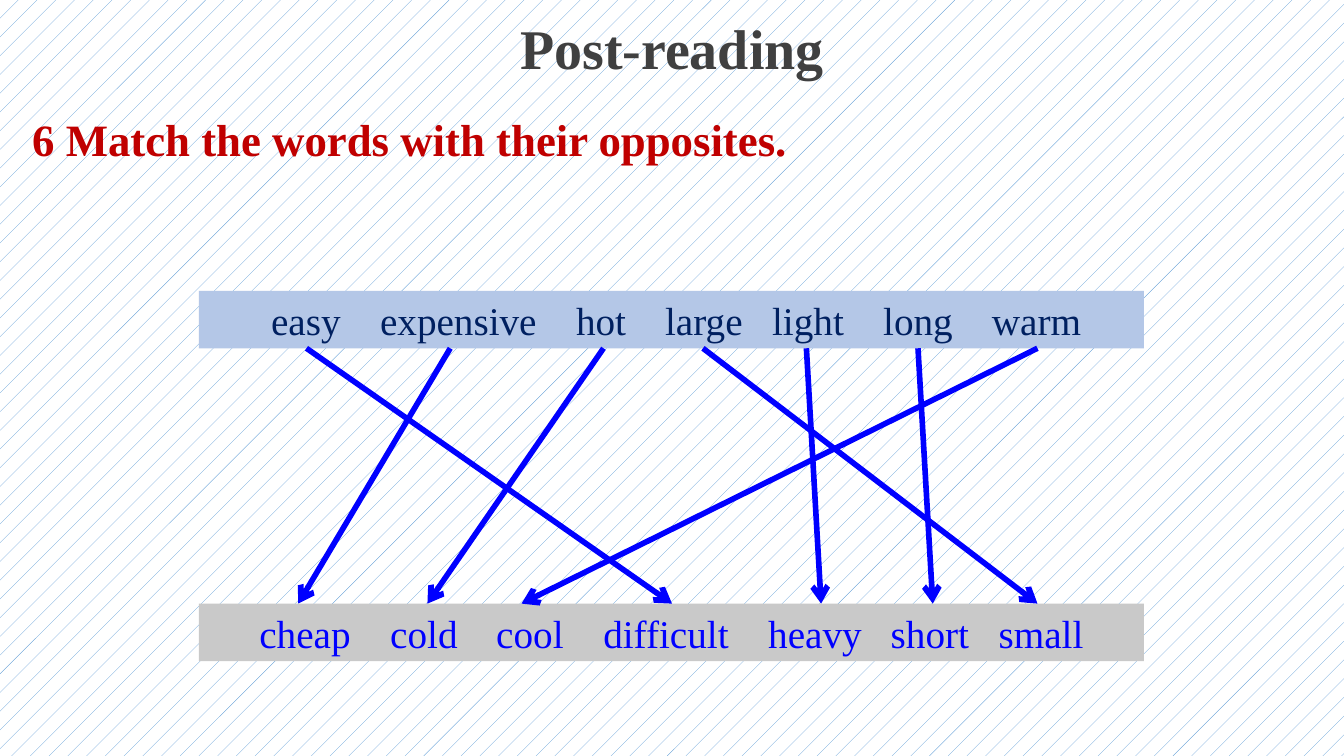
import pptx
import pptx.util
import pptx.dml.color
import pptx.enum.dml
import pptx.enum.shapes
import pptx.enum.text
import pptx.oxml
import pptx.oxml.ns

Pt = pptx.util.Pt
ALIGN = pptx.enum.text.PP_ALIGN
FONT = "Times New Roman"
BAR_LEFT, BAR_WIDTH, BAR_HEIGHT = 106.6, 506.2, 30.8
WORDS_TOP, OPPOSITES_TOP = 155.8, 323.4
INSET_X, INSET_Y = 5.04, 2.88

WORDS = [("easy", 163.9), ("expensive", 245.6), ("hot", 322), ("large", 377.1),
         ("light", 432.9), ("long", 491.8), ("warm", 555.3)]
OPPOSITES = [("cheap", 163.4), ("cold", 227.1), ("cool", 283.9), ("difficult", 356.8),
             ("heavy", 436.6), ("short", 498.2), ("small", 557.7)]
MATCHES = [(164.2, 360), (241.2, 159.8), (323.3, 229), (376.6, 555.8),
           (491.8, 499.7), (432, 439.9), (555.8, 279.4)]


def color(value):
    return pptx.dml.color.RGBColor.from_string(value)


def write(shape, text, size, ink, align, bold=False):
    frame = shape.text_frame
    frame.word_wrap = True
    frame.auto_size = pptx.enum.text.MSO_AUTO_SIZE.NONE
    frame.vertical_anchor = pptx.enum.text.MSO_ANCHOR.TOP
    frame.margin_left = frame.margin_right = Pt(INSET_X)
    frame.margin_top = frame.margin_bottom = Pt(INSET_Y)
    paragraph = frame.paragraphs[0]
    paragraph.alignment = align
    paragraph.space_before = Pt(0)
    run = paragraph.add_run()
    run.text = text
    run.font.name = FONT
    run.font.size = Pt(size)
    run.font.bold = bold
    run.font.color.rgb = color(ink)
    return paragraph.get_or_add_pPr() if hasattr(paragraph, "get_or_add_pPr") else paragraph._p.get_or_add_pPr()


def add_child(parent, tag, **attributes):
    child = pptx.oxml.parse_xml(f"<{tag} {pptx.oxml.ns.nsdecls('a')}/>")
    for name, value in attributes.items():
        child.set(name, str(value))
    parent.append(child)
    return child


def place(shape, left, top, width, height):
    shape.left, shape.top = Pt(left), Pt(top)
    shape.width, shape.height = Pt(width), Pt(height)


def add_word_bar(slide, top, words, fill, ink):
    bar = slide.shapes.add_shape(pptx.enum.shapes.MSO_SHAPE.RECTANGLE,
                                 Pt(BAR_LEFT), Pt(top), Pt(BAR_WIDTH), Pt(BAR_HEIGHT))
    bar.shadow.inherit = False
    bar.fill.solid()
    bar.fill.fore_color.rgb = color(fill)
    bar.line.fill.background()
    text = "".join("\t" + word for word, center in words)
    properties = write(bar, text, 21, ink, ALIGN.LEFT)
    stops = add_child(properties, "a:tabLst")
    for word, center in words:
        add_child(stops, "a:tab", pos=int(Pt(center - BAR_LEFT - INSET_X)), algn="ctr")


def add_match(slide, start, end):
    arrow = slide.shapes.add_connector(pptx.enum.shapes.MSO_CONNECTOR.STRAIGHT,
                                       Pt(start), Pt(WORDS_TOP + BAR_HEIGHT),
                                       Pt(end), Pt(OPPOSITES_TOP))
    arrow.line.width = Pt(3)
    arrow.line.color.rgb = color("0000FF")
    add_child(arrow.line._get_or_add_ln(), "a:tailEnd", type="arrow")
    add_child(arrow._element.spPr, "a:effectLst")


def main():
    deck = pptx.Presentation()
    deck.slide_width, deck.slide_height = Pt(720), Pt(405)
    slide = deck.slides.add_slide(deck.slide_layouts[1])
    backdrop = slide.background.fill
    backdrop.patterned()
    backdrop.pattern = pptx.enum.dml.MSO_PATTERN.PERCENT_5
    backdrop.fore_color.rgb = color("5B9BD5")
    backdrop.back_color.rgb = color("FFFFFF")

    title, task = slide.placeholders
    place(title, 0, 4.3, 720, 41.8)
    write(title, "Post-reading", 30, "404040", ALIGN.CENTER, True)
    place(task, 12.2, 56.9, 694.8, 34.6)
    properties = write(task, "6 Match the words with their opposites.", 24, "C00000", ALIGN.LEFT, True)
    properties.set("marL", str(int(Pt(30))))
    properties.set("indent", str(int(Pt(-30))))
    add_child(properties, "a:buNone")

    add_word_bar(slide, WORDS_TOP, WORDS, "B4C7E7", "002060")
    add_word_bar(slide, OPPOSITES_TOP, OPPOSITES, "C9C9C9", "0000FF")
    for start, end in MATCHES:
        add_match(slide, start, end)
    deck.save("out.pptx")


main()
